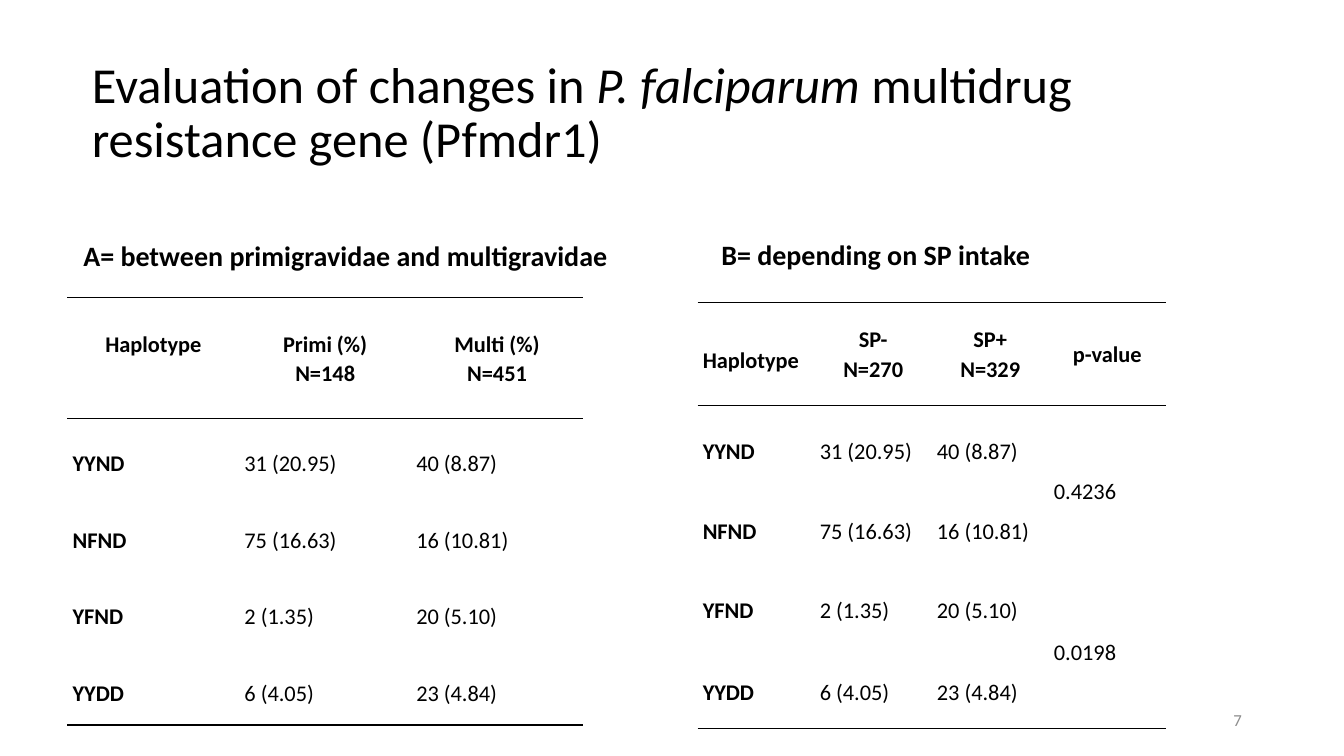
from lxml.etree import SubElement
from pptx import Presentation
from pptx.dml.color import RGBColor
from pptx.enum.text import MSO_ANCHOR as Anchor, MSO_AUTO_SIZE as AutoSize, PP_ALIGN as Align
from pptx.oxml.ns import qn
from pptx.util import Cm, Pt

BLACK = RGBColor(0x00, 0x00, 0x00)
GREY = RGBColor(0x8C, 0x8C, 0x8C)
FONT = "Calibri"
NO_STYLE = "{2D5ABB26-0587-4C30-8999-92F81FD0307C}"
HAPLOTYPES = ["YYND", "NFND", "YFND", "YYDD"]
COUNTS = [
    ["31 (20.95)", "40 (8.87)"],
    ["75 (16.63)", "16 (10.81)"],
    ["2 (1.35)", "20 (5.10)"],
    ["6 (4.05)", "23 (4.84)"],
]
P_VALUES = ["0.4236", "", "0.0198", ""]


def format_runs(p, size, bold=False, color=BLACK):
    for r in p.runs:
        r.font.name = FONT
        r.font.size = Pt(size)
        r.font.bold = bold
        r.font.color.rgb = color


def add_title(s, parts):
    """Fill the title from (text, italic) pairs."""
    sp = s.shapes.title
    sp.left, sp.top, sp.width, sp.height = Cm(2.06), Cm(1.04), Cm(30.33), Cm(3.68)
    tf = sp.text_frame
    tf.auto_size = AutoSize.NONE
    tf.word_wrap = True
    tf.vertical_anchor = Anchor.MIDDLE
    p = tf.paragraphs[0]
    p.alignment = Align.LEFT
    p.line_spacing = 0.9
    for text, italic in parts:
        r = p.add_run()
        r.text = text
        r.font.italic = italic
    format_runs(p, 36)


def add_text(s, text, box, size, anchor, align=Align.LEFT, bold=False, color=BLACK):
    sp = s.shapes.add_textbox(*map(Cm, box))
    tf = sp.text_frame
    tf.text = text
    tf.word_wrap = True
    tf.vertical_anchor = anchor
    p = tf.paragraphs[0]
    p.alignment = align
    p.line_spacing = 0.9
    format_runs(p, size, bold, color)


def add_rule(cell, side):
    """Draw a thin black border on one side, 'lnT' or 'lnB'."""
    ln = SubElement(cell._tc.get_or_add_tcPr(), qn(f"a:{side}"), w=str(Pt(1)))
    fill = SubElement(ln, qn("a:solidFill"))
    SubElement(fill, qn("a:srgbClr"), val=str(BLACK))


def format_cell(cell, align, spacing, bold, margin=0.13):
    cell.vertical_anchor = Anchor.MIDDLE
    cell.margin_left = cell.margin_right = Cm(margin)
    cell.margin_top = cell.margin_bottom = 0
    cell.fill.background()
    for p in cell.text_frame.paragraphs:
        p.alignment = align
        p.line_spacing = spacing
        format_runs(p, 16, bold)


def add_haplotype_table(s, left, top, col_width, row_heights, rows, merges=()):
    """Add a table ruled above and below its header and at its foot."""
    n_rows, n_cols = len(rows), len(rows[0])
    frame = s.shapes.add_table(n_rows, n_cols, Cm(left), Cm(top),
                               Cm(col_width * n_cols), Cm(sum(row_heights)))
    table = frame.table
    table.first_row = table.horz_banding = False
    table._tbl.tblPr.find(qn("a:tableStyleId")).text = NO_STYLE
    for column in table.columns:
        column.width = Cm(col_width)
    for row, height in zip(table.rows, row_heights):
        row.height = Cm(height)
    for first, last, col in merges:
        table.cell(first, col).merge(table.cell(last, col))
    for i, values in enumerate(rows):
        for j, value in enumerate(values):
            cell = table.cell(i, j)
            cell.text = value
            if i == 0:
                add_rule(cell, "lnT")
            if i == 0 or i + cell.span_height == n_rows:
                add_rule(cell, "lnB")
            if i == 0:
                format_cell(cell, Align.CENTER, 1.07, True, 0.08)
            else:
                format_cell(cell, Align.JUSTIFY, 1.5, j == 0)
    return table


def main():
    prs = Presentation()
    prs.slide_width, prs.slide_height = Cm(33.87), Cm(19.05)
    s = prs.slides.add_slide(prs.slide_layouts[5])

    add_title(s, [("Evaluation of changes in ", False), ("P. falciparum ", True),
                  ("multidrug resistance gene (Pfmdr1)", False)])
    add_text(s, "A= between primigravidae and multigravidae",
             (1.85, 5.97, 14.33, 1.02), 20, Anchor.BOTTOM, bold=True)
    add_text(s, "B= depending on SP intake",
             (17.93, 5.84, 13.34, 1.14), 20, Anchor.BOTTOM, bold=True)

    body = [[name, *counts] for name, counts in zip(HAPLOTYPES, COUNTS)]
    sp_body = [[*row, p_value] for row, p_value in zip(body, P_VALUES)]
    sp_table = add_haplotype_table(
        s, 17.58, 7.62, 2.95, [2.6, 2, 2, 2, 2.13],
        [["Haplotype", "SP-\nN=270", "SP+\nN=329", "p-value"], *sp_body],
        merges=[(1, 2, 3), (3, 4, 3)])
    format_cell(sp_table.cell(0, 0), Align.JUSTIFY, 1.5, True)

    gravidity_table = add_haplotype_table(
        s, 1.7, 7.5, 4.33, [3.05] + [1.93] * 4,
        [["Haplotype", "Primi (%)\nN=148", "Multi (%)\nN=451"], *body])
    # Lift the one-line heading level with the first line of its neighbours
    gravidity_table.cell(0, 0).margin_bottom = Cm(0.74)

    add_text(s, "7", (23.93, 17.65, 7.62, 1.02), 12, Anchor.MIDDLE, Align.RIGHT, color=GREY)
    prs.save("out.pptx")


if __name__ == "__main__":
    main()
